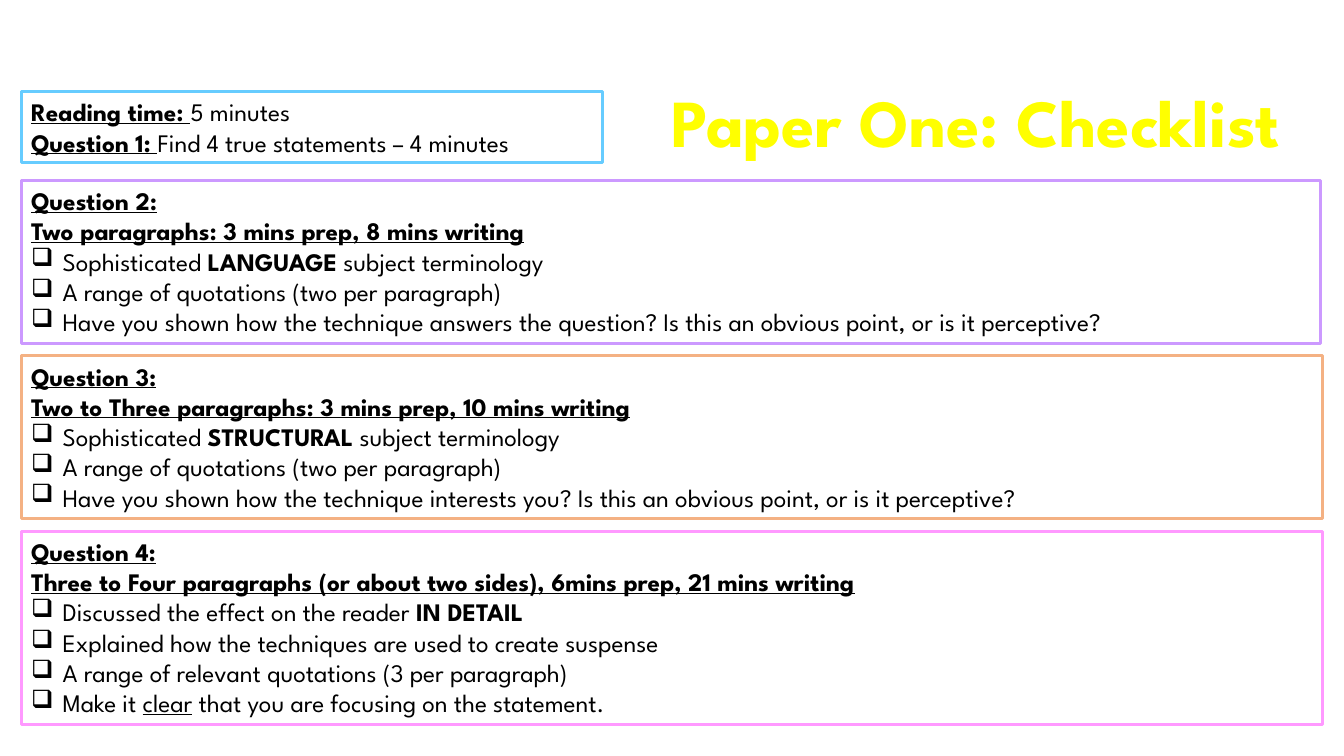
from dataclasses import dataclass

from lxml import etree
from pptx import Presentation
from pptx.dml.color import RGBColor
from pptx.enum.shapes import MSO_SHAPE
from pptx.enum.text import MSO_ANCHOR, MSO_AUTO_SIZE, PP_ALIGN
from pptx.oxml.ns import qn
from pptx.slide import Slide
from pptx.util import Pt

RECTANGLE = MSO_SHAPE.RECTANGLE
TOP = MSO_ANCHOR.TOP
GROW = MSO_AUTO_SIZE.SHAPE_TO_FIT_TEXT
LEFT, CENTER = PP_ALIGN.LEFT, PP_ALIGN.CENTER


@dataclass(frozen=True)
class Theme:
    font: str = "League Spartan"
    body_size: float = 18
    title_size: float = 48
    ink: str = "000000"
    paper: str = "FFFFFF"
    title: str = "FFFF00"
    timing: str = "66CCFF"
    question_2: str = "CC99FF"
    question_3: str = "F4B183"
    question_4: str = "FF99FF"
    border: float = 2
    title_outline: float = 1.75


@dataclass(frozen=True)
class Span:
    text: str
    bold: bool = False
    underline: bool = False


@dataclass(frozen=True)
class Line:
    spans: tuple[Span, ...]
    checkbox: bool = False


@dataclass(frozen=True)
class Panel:
    top: float
    width: float
    color: str
    lines: tuple[Line, ...]


THEME = Theme()

# Layout in points
SLIDE_WIDTH, SLIDE_HEIGHT = 960, 540
PANEL_LEFT = 15.1
TIMING_TOP, TIMING_WIDTH = 65.5, 415.4
QUESTIONS_TOP, QUESTION_GAP = 128.9, 9
LINE_HEIGHT, PANEL_PADDING = 21.8, 7.3
CHECKBOX_INDENT = 22.5
TITLE_LEFT, TITLE_TOP, TITLE_WIDTH, TITLE_HEIGHT = 442, 54, 509.8, 65.5


def heading(text: str) -> Span:
    return Span(text, bold=True, underline=True)


def check(*spans: Span) -> Line:
    return Line(spans, checkbox=True)


def question(number: int, timing: str, *checks: Line) -> tuple[Line, ...]:
    return (Line((heading(f"Question {number}:"),)), Line((heading(timing),)), *checks)


def technique_checks(subject: str, effect: str) -> tuple[Line, ...]:
    return (
        check(Span("Sophisticated "), Span(subject, bold=True), Span(" subject terminology")),
        check(Span("A range of quotations (two per paragraph)")),
        check(Span(f"Have you shown how the technique {effect}? "
                   "Is this an obvious point, or is it perceptive?")),
    )


TIMING = Panel(TIMING_TOP, TIMING_WIDTH, THEME.timing, (
    Line((heading("Reading time: "), Span("5 minutes"))),
    Line((heading("Question 1: "), Span("Find 4 true statements – 4 minutes"))),
))

# Width, border colour and lines of each question, from top to bottom
QUESTIONS = (
    (928.1, THEME.question_2, question(
        2, "Two paragraphs: 3 mins prep, 8 mins writing",
        *technique_checks("LANGUAGE", "answers the question"))),
    (929.5, THEME.question_3, question(
        3, "Two to Three paragraphs: 3 mins prep, 10 mins writing",
        *technique_checks("STRUCTURAL", "interests you"))),
    (929.5, THEME.question_4, question(
        4, "Three to Four paragraphs (or about two sides), 6mins prep, 21 mins writing",
        check(Span("Discussed the effect on the reader "), Span("IN DETAIL", bold=True)),
        check(Span("Explained how the techniques are used to create suspense")),
        check(Span("A range of relevant quotations (3 per paragraph)")),
        check(Span("Make it "), Span("clear", underline=True),
              Span(" that you are focusing on the statement.")))),
)


def panel_height(lines: tuple[Line, ...]) -> float:
    return len(lines) * LINE_HEIGHT + PANEL_PADDING


def style_font(font, size: float, color: str, bold: bool, underline: bool = False) -> None:
    font.name = THEME.font
    font.size = Pt(size)
    font.color.rgb = RGBColor.from_string(color)
    font.bold = bold
    font.underline = underline


def add_checkbox(paragraph) -> None:
    properties = paragraph._p.get_or_add_pPr()
    properties.set("marL", str(Pt(CHECKBOX_INDENT)))
    properties.set("indent", str(-Pt(CHECKBOX_INDENT)))
    etree.SubElement(properties, qn("a:buChar")).set("char", "❑")


def write_line(paragraph, line: Line) -> None:
    paragraph.alignment = LEFT
    if line.checkbox:
        add_checkbox(paragraph)
    for span in line.spans:
        run = paragraph.add_run()
        run.text = span.text
        style_font(run.font, THEME.body_size, THEME.ink, span.bold, span.underline)


def draw_panel(slide: Slide, panel: Panel) -> None:
    box = slide.shapes.add_shape(RECTANGLE, Pt(PANEL_LEFT), Pt(panel.top),
                                 Pt(panel.width), Pt(panel_height(panel.lines)))
    box.shadow.inherit = False
    box.fill.solid()
    box.fill.fore_color.rgb = RGBColor.from_string(THEME.paper)
    box.line.color.rgb = RGBColor.from_string(panel.color)
    box.line.width = Pt(THEME.border)
    frame = box.text_frame
    frame.word_wrap = True
    frame.auto_size = GROW
    frame.vertical_anchor = TOP
    for index, line in enumerate(panel.lines):
        write_line(frame.add_paragraph() if index else frame.paragraphs[0], line)


def draw_title(slide: Slide) -> None:
    title = slide.shapes.add_textbox(Pt(TITLE_LEFT), Pt(TITLE_TOP),
                                     Pt(TITLE_WIDTH), Pt(TITLE_HEIGHT))
    frame = title.text_frame
    frame.word_wrap = False
    frame.auto_size = GROW
    frame.text = "Paper One: Checklist"
    paragraph = frame.paragraphs[0]
    paragraph.alignment = CENTER
    run = paragraph.runs[0]
    style_font(run.font, THEME.title_size, THEME.title, bold=True)
    # Letter outline
    outline = etree.Element(qn("a:ln"), w=str(Pt(THEME.title_outline)))
    fill = etree.SubElement(outline, qn("a:solidFill"))
    etree.SubElement(fill, qn("a:srgbClr"), val=THEME.ink)
    run._r.get_or_add_rPr().insert(0, outline)


def main() -> None:
    presentation = Presentation()
    presentation.slide_width = Pt(SLIDE_WIDTH)
    presentation.slide_height = Pt(SLIDE_HEIGHT)
    slide = presentation.slides.add_slide(presentation.slide_layouts[6])

    # Question checklists, stacked with equal gaps
    top = QUESTIONS_TOP
    for width, color, lines in QUESTIONS:
        draw_panel(slide, Panel(top, width, color, lines))
        top += panel_height(lines) + QUESTION_GAP

    # Title and timing row
    draw_title(slide)
    draw_panel(slide, TIMING)
    presentation.save("out.pptx")


if __name__ == "__main__":
    main()
